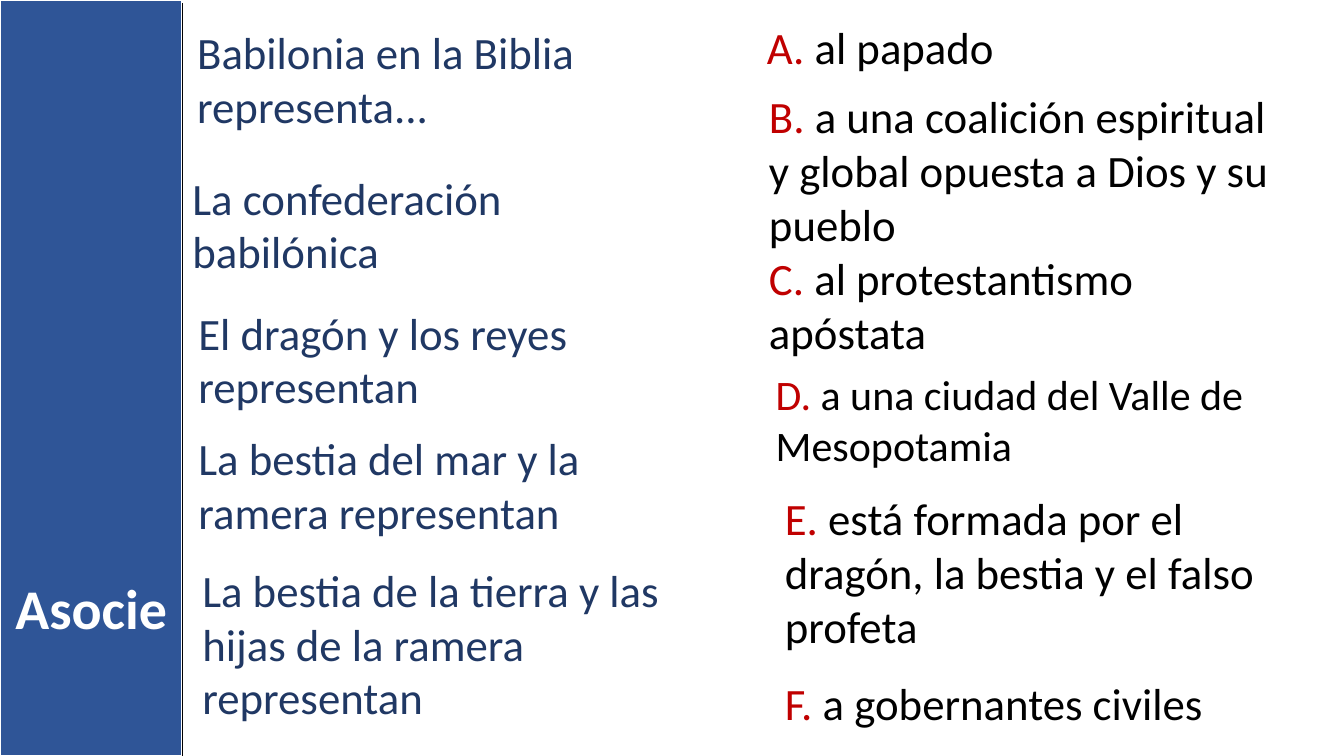
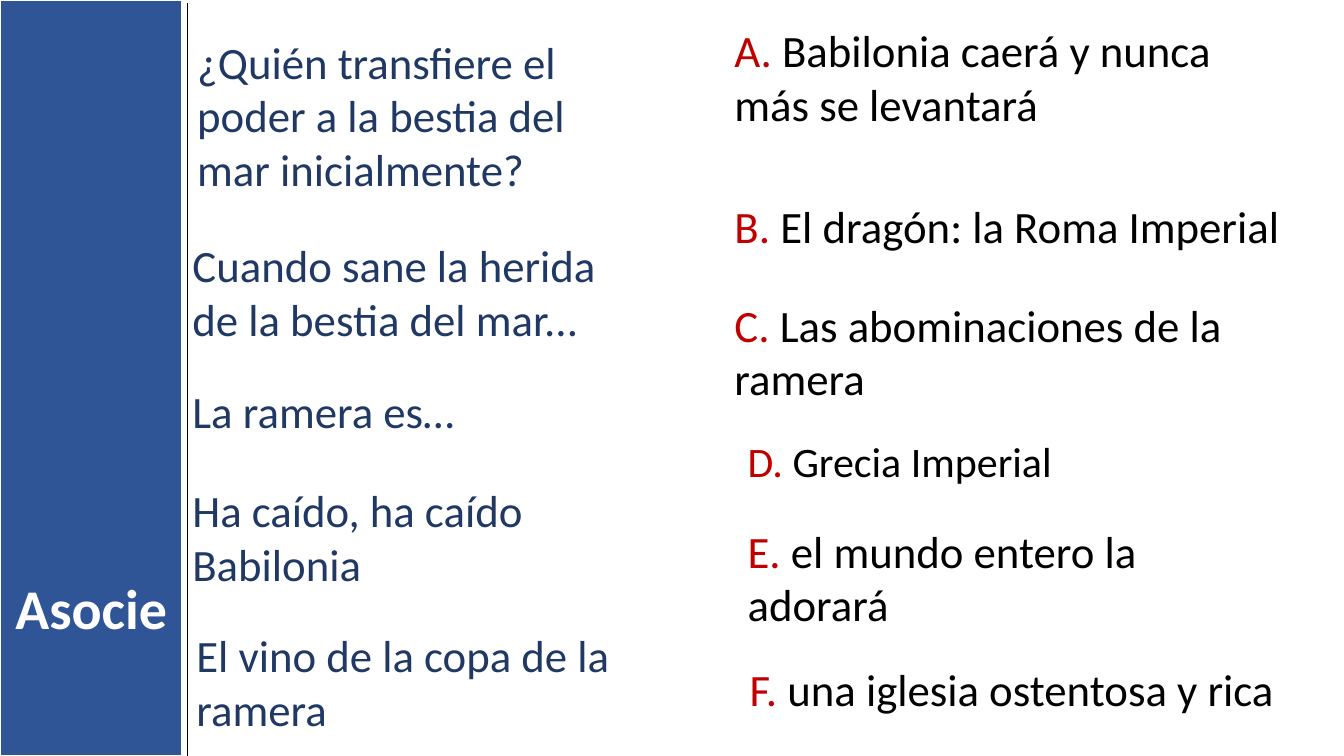
from pptx import Presentation
from pptx.dml.color import RGBColor
from pptx.enum.shapes import MSO_CONNECTOR as CONN, MSO_SHAPE as SHAPE
from pptx.enum.text import MSO_AUTO_SIZE as FIT, PP_ALIGN as ALIGN
from pptx.util import Cm, Pt
from lxml import etree

# Shared look
FONT = "Calibri"
BLUE, NAVY, RED, BLACK, WHITE = "2F5597", "203864", "C00000", "000000", "FFFFFF"
WIDTH, HEIGHT = 33.87, 19.05
BAND = 4.6
A_NS = "http://schemas.openxmlformats.org/drawingml/2006/main"


def rgb(color):
    return RGBColor.from_string(color)


def add_text(s, x, y, w, lines, runs, size=32, bold=None, align=None):
    """Text box tall enough for its lines; runs are (text, colour) pairs."""
    h = 0.25 + lines * size * 0.043
    tf = s.shapes.add_textbox(Cm(x), Cm(y), Cm(w), Cm(h)).text_frame
    tf.word_wrap = True
    tf.auto_size = FIT.SHAPE_TO_FIT_TEXT
    p = tf.paragraphs[0]
    p.alignment = align
    for text, color in runs:
        r = p.add_run()
        r.text = text
        r.font.name, r.font.size, r.font.bold = FONT, Pt(size), bold
        r.font.color.rgb = rgb(color)


# Each entry: left, top, width (cm), lines, text; answers also give a size.
# Answers are lettered in order.
slides = [
    {
        "rule_x": 4.6,
        "prompts": [
            (4.72, 0.51, 12.98, 2, "Babilonia en la Biblia representa..."),
            (4.6, 4.17, 12.55, 2, "La confederación babilónica"),
            (4.75, 7.57, 12.95, 2, "El dragón y los reyes representan"),
            (4.75, 10.74, 12.55, 2, "La bestia del mar y la ramera representan"),
            (4.85, 14.05, 12.12, 3,
             "La bestia de la tierra y las hijas de la ramera representan"),
        ],
        "answers": [
            (19.08, 0.36, 12.8, 1, "al papado", 32),
            (19.13, 2.11, 13.44, 3,
             "a una coalición espiritual y global opuesta a Dios y su pueblo", 32),
            (19.13, 6.2, 12.4, 2, "al protestantismo apóstata", 32),
            (19.3, 9.17, 13.44, 2, "a una ciudad del Valle de Mesopotamia", 30),
            (19.53, 12.24, 14.05, 3,
             "está formada por el dragón, la bestia y el falso profeta", 32),
            (19.53, 16.89, 12.62, 1, "a gobernantes civiles", 32),
        ],
    },
    {
        "rule_x": 4.72,
        "prompts": [
            (4.72, 0.74, 11.73, 3,
             "¿Quién transfiere el poder a la bestia del mar inicialmente?"),
            (4.6, 5.87, 11.89, 2, "Cuando sane la herida de la bestia del mar..."),
            (4.6, 9.55, 11.33, 1, "La ramera es…"),
            (4.6, 12.04, 12.55, 2, "Ha caído, ha caído Babilonia"),
            (4.7, 15.7, 11.33, 2, "El vino de la copa de la ramera"),
        ],
        "answers": [
            (18.26, 0.46, 13.61, 2, "Babilonia caerá y nunca más se levantará", 32),
            (18.26, 4.88, 15.14, 1, "El dragón: la Roma Imperial", 32),
            (18.26, 7.37, 14.22, 2, "Las abominaciones de la ramera", 32),
            (18.59, 10.85, 13.28, 1, "Grecia Imperial", 30),
            (18.59, 13.06, 14.05, 2, "el mundo entero la adorará", 32),
            (18.64, 16.54, 14.4, 1, "una iglesia ostentosa y rica", 32),
        ],
    },
]

prs = Presentation()
prs.slide_width, prs.slide_height = Cm(WIDTH), Cm(HEIGHT)

for content in slides:
    s = prs.slides.add_slide(prs.slide_layouts[6])

    # Side band with its title
    band = s.shapes.add_shape(SHAPE.RECTANGLE, 0, 0, Cm(BAND), Cm(HEIGHT))
    band.shadow.inherit = False
    band.fill.solid()
    band.fill.fore_color.rgb = rgb(BLUE)
    band.line.color.rgb = rgb(WHITE)
    band.line.width = Pt(1.5)
    add_text(s, 0, 14.33, BAND, 1, [("Asocie", WHITE)], 40, True, ALIGN.CENTER)

    # Prompts
    for x, y, w, lines, text in content["prompts"]:
        add_text(s, x, y, w, lines, [(text, NAVY)])

    # Lettered answers
    for letter, (x, y, w, lines, text, size) in zip("ABCDEF", content["answers"]):
        add_text(s, x, y, w, lines, [(f"{letter}. ", RED), (text, BLACK)], size)

    # Vertical rule
    x = Cm(content["rule_x"])
    rule = s.shapes.add_connector(CONN.STRAIGHT, x, Cm(0.08), x, Cm(HEIGHT))
    rule.line.color.rgb = rgb(BLACK)
    rule.line.width = Pt(1)
    etree.SubElement(rule._element.spPr, f"{{{A_NS}}}effectLst")

prs.save("out.pptx")
